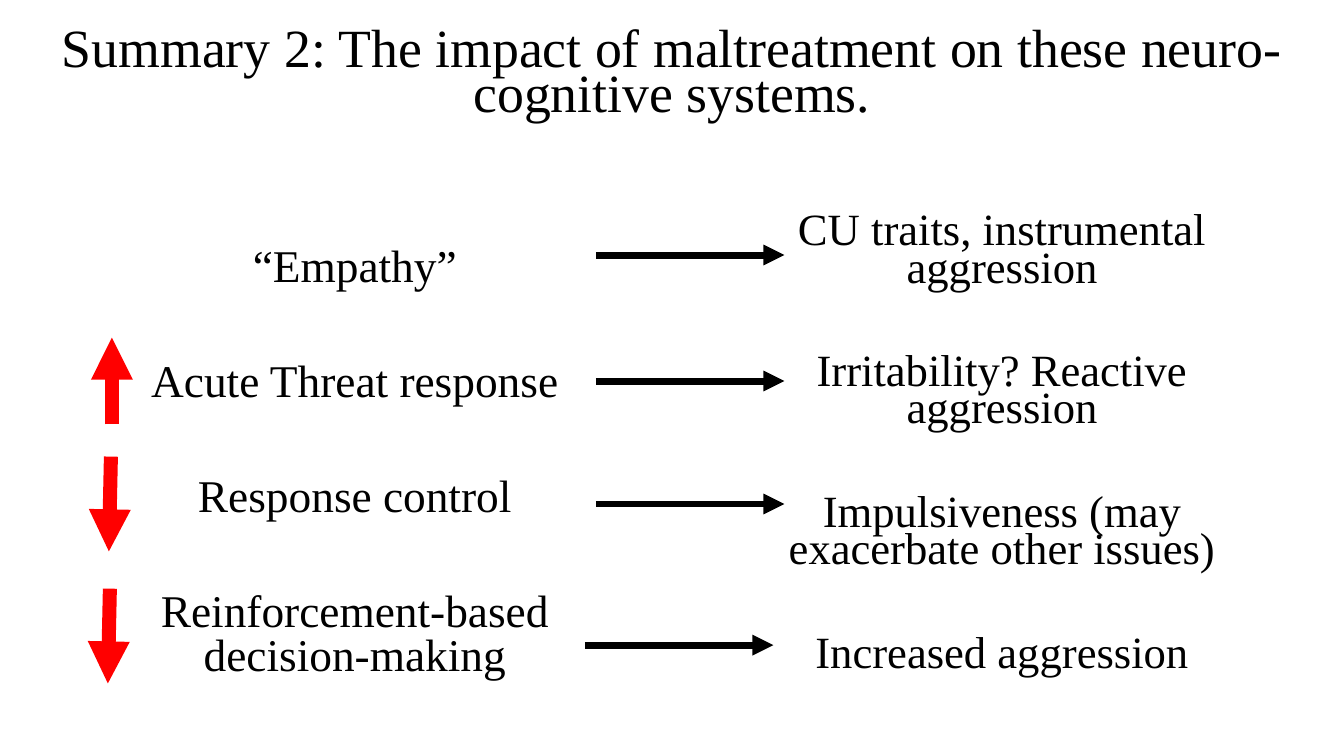
import pptx
import pptx.util
import pptx.dml.color
import pptx.enum.shapes
import pptx.enum.text
import pptx.oxml

BLACK = pptx.dml.color.RGBColor(0, 0, 0)
RED = pptx.dml.color.RGBColor(255, 0, 0)
WHITE = pptx.dml.color.RGBColor(255, 255, 255)
FONT = "Times New Roman"
WIDE, HIGH = 13.33, 7.5
NS = 'xmlns:a="http://schemas.openxmlformats.org/drawingml/2006/main"'

TITLE = "Summary 2: The impact of maltreatment on these neuro-cognitive systems."
SYSTEMS = ["“Empathy”", "Acute Threat response", "Response control",
           "Reinforcement-based decision-making"]
EFFECTS = ["CU traits, instrumental aggression",
           "Irritability? Reactive aggression",
           "Impulsiveness (may exacerbate other issues)",
           "Increased aggression"]


def add_text(slide, box, lines, size, line=1.0, gap=0):
    """Place centred paragraphs in a box, with a gap between them."""
    shape = slide.shapes.add_textbox(*map(pptx.util.Inches, box))
    frame = shape.text_frame
    frame.word_wrap = True
    for i, text in enumerate(lines):
        para = frame.paragraphs[0] if i == 0 else frame.add_paragraph()
        para.text = text
        para.alignment = pptx.enum.text.PP_ALIGN.CENTER
        para.line_spacing = line
        para.space_before = pptx.util.Pt(gap if i else 0)
        para.font.name = FONT
        para.font.size = pptx.util.Pt(size)
        para.font.color.rgb = BLACK


def add_arrow(slide, start, end, color, width):
    """Draw a straight arrow from start to end."""
    ends = [pptx.util.Inches(n) for n in (*start, *end)]
    kind = pptx.enum.shapes.MSO_CONNECTOR.STRAIGHT
    arrow = slide.shapes.add_connector(kind, *ends)
    arrow.line.color.rgb = color
    arrow.line.width = pptx.util.Pt(width)
    head = pptx.oxml.parse_xml(f'<a:tailEnd {NS} type="triangle"/>')
    arrow.line._get_or_add_ln().append(head)
    arrow._element.spPr.append(pptx.oxml.parse_xml(f"<a:effectLst {NS}/>"))


def add_title(slide, box):
    add_text(slide, box, [TITLE], 38.4, line=0.7)


def add_systems(slide, box):
    add_text(slide, box, SYSTEMS, 32.4, line=0.8, gap=51)


def add_effects(slide, box):
    add_text(slide, box, EFFECTS, 31.9, line=0.7, gap=47)


def add_links(slide, box):
    """Arrows from each system to its effect; the last sits further left."""
    left, top, width, _ = box
    for drop, shift in [(0, 0), (1.25, 0), (2.47, 0), (3.87, -0.11)]:
        x, y = left + shift, top + drop
        add_arrow(slide, (x, y), (x + width, y), BLACK, 5)


def add_trends(slide, box):
    """Red arrows: one up, then two down that lean slightly left."""
    left, top, width, _ = box
    fall, lean = 0.94, 0.02
    right = left + width
    add_arrow(slide, (right, top + 0.86), (right, top), RED, 10)
    for x, drop in [(right - 0.01, 1.18), (right - 0.02, 2.49)]:
        y = top + drop
        add_arrow(slide, (x, y), (x - lean, y + fall), RED, 10)


def main():
    deck = pptx.Presentation()
    deck.slide_width = pptx.util.Inches(WIDE)
    deck.slide_height = pptx.util.Inches(HIGH)
    slide = deck.slides.add_slide(deck.slide_layouts[6])
    slide.background.fill.solid()
    slide.background.fill.fore_color.rgb = WHITE

    # Heading and the two columns of text
    add_title(slide, (0, 0.26, WIDE, 1.31))
    add_systems(slide, (0.75, 2.41, 5.54, 4.36))
    add_effects(slide, (7.17, 2.09, 5.54, 5))

    # Arrows between the columns and beside the systems
    add_links(slide, (5.91, 2.53, 1.87, 3.87))
    add_trends(slide, (1.07, 3.35, 0.04, 3.43))
    deck.save("out.pptx")


if __name__ == "__main__":
    main()
